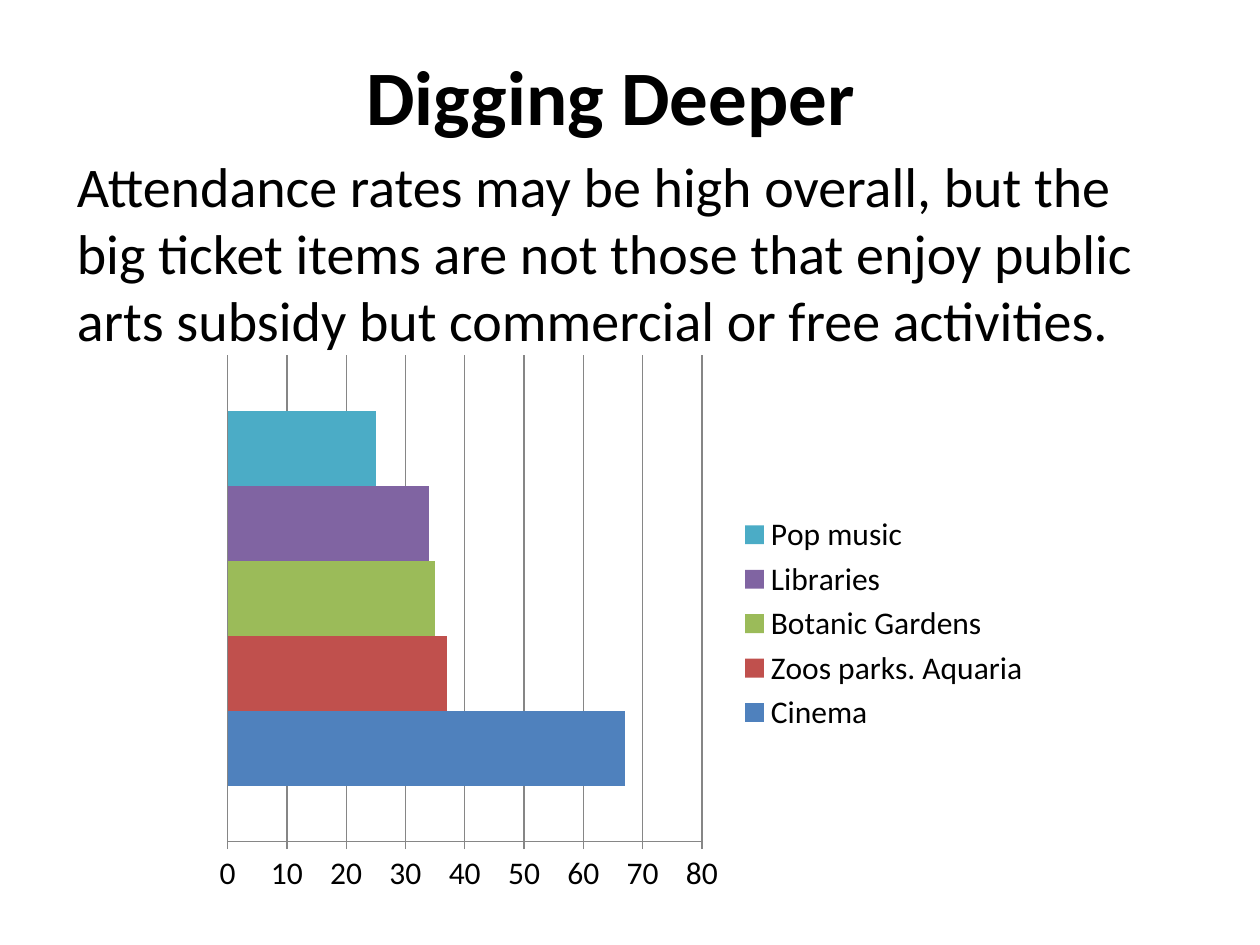
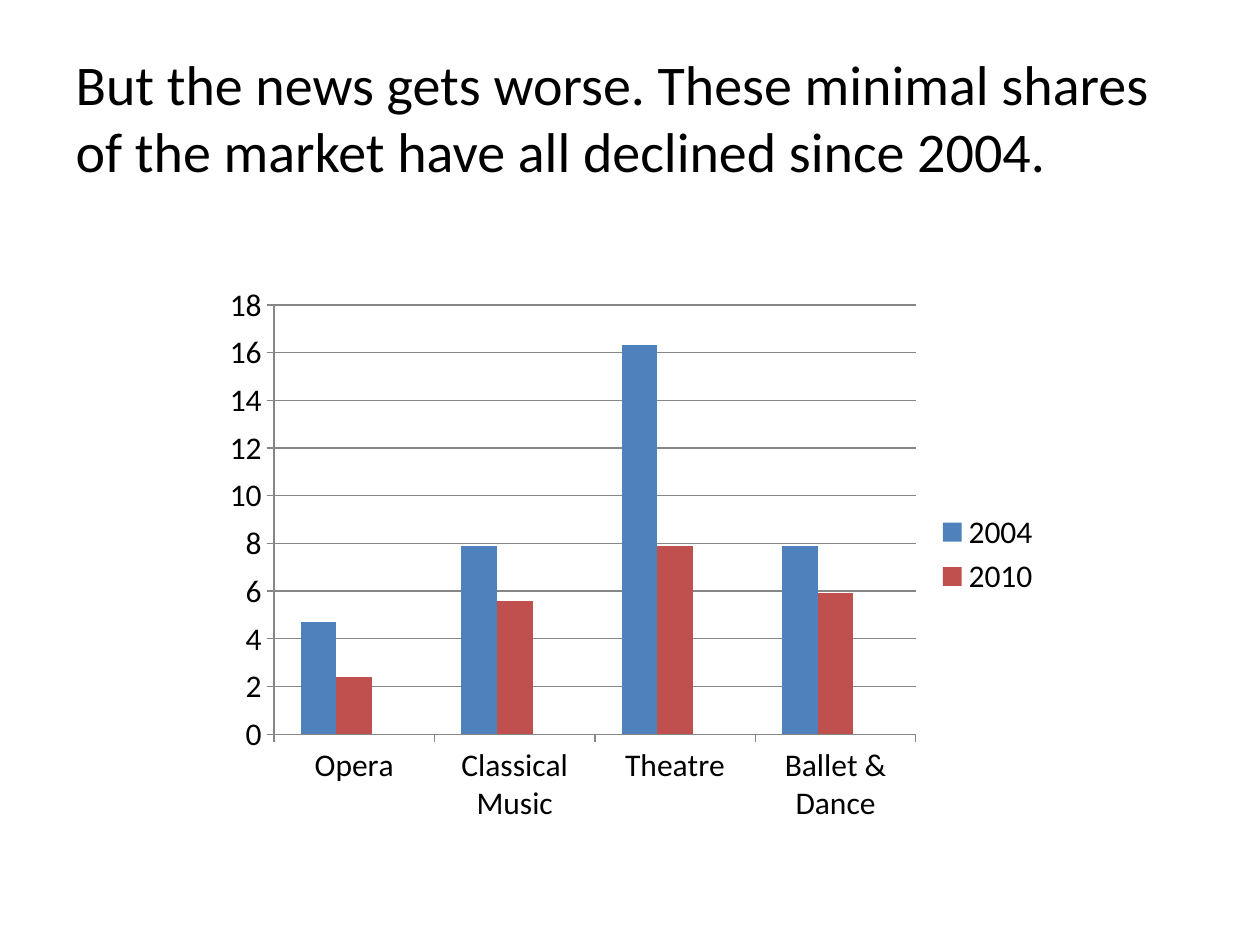
from dataclasses import dataclass

from lxml import etree
from pptx import Presentation
from pptx.chart.data import CategoryChartData
from pptx.dml.color import RGBColor
from pptx.enum.chart import XL_CHART_TYPE, XL_LEGEND_POSITION, XL_TICK_MARK
from pptx.enum.text import MSO_ANCHOR, MSO_AUTO_SIZE, PP_ALIGN
from pptx.oxml.ns import qn
from pptx.util import Inches, Pt

BAR, COLUMN = XL_CHART_TYPE.BAR_CLUSTERED, XL_CHART_TYPE.COLUMN_CLUSTERED
LEGEND_RIGHT = XL_LEGEND_POSITION.RIGHT
TICK_OUT = XL_TICK_MARK.OUTSIDE
LEFT, CENTER = PP_ALIGN.LEFT, PP_ALIGN.CENTER
TOP, MIDDLE = MSO_ANCHOR.TOP, MSO_ANCHOR.MIDDLE
NO_FIT = MSO_AUTO_SIZE.NONE

FONT = "Calibri"
INK, GRID = "000000", "868686"
SERIES_COLORS = ("4F81BD", "C0504D", "9BBB59", "8064A2", "4BACC6")
TEXT_WIDTH = 9
CHART_SIZE = (6.67, 4.44)
TITLE_AND_BODY, TITLE_ONLY = 1, 5


@dataclass
class TextStyle:
    """Position and look of a placeholder, in inches and points."""
    left: float
    top: float
    height: float
    size: int = 32
    bold: bool = False
    align: PP_ALIGN = LEFT
    anchor: MSO_ANCHOR = MIDDLE


@dataclass
class ChartSpec:
    """Kind, position and data of a clustered chart."""
    kind: XL_CHART_TYPE
    left: float
    top: float
    categories: tuple
    series: dict
    show_categories: bool = True
    unlisted: tuple = ()


def rgb(value: str) -> RGBColor:
    """Turn a hex string into a colour."""
    return RGBColor.from_string(value)


def style_font(font, size: int, bold: bool = False) -> None:
    """Apply the shared typeface and ink."""
    font.name, font.size, font.bold = FONT, Pt(size), bold
    font.color.rgb = rgb(INK)


def fill_text(sp, text: str, style: TextStyle) -> None:
    """Place a placeholder and write one unbulleted paragraph in it."""
    sp.left, sp.top = Inches(style.left), Inches(style.top)
    sp.width, sp.height = Inches(TEXT_WIDTH), Inches(style.height)
    tf = sp.text_frame
    tf.word_wrap, tf.auto_size, tf.vertical_anchor = True, NO_FIT, style.anchor
    p = tf.paragraphs[0]
    p.alignment = style.align
    p_pr = p._p.get_or_add_pPr()
    p_pr.set("marL", "0")
    p_pr.set("indent", "0")
    etree.SubElement(p_pr, qn("a:buNone"))
    r = p.add_run()
    r.text = text
    style_font(r.font, style.size, style.bold)


def style_axis(axis) -> None:
    """Draw an axis with a thin grey line and outer ticks."""
    axis.major_tick_mark = TICK_OUT
    axis.format.line.color.rgb = rgb(GRID)
    axis.format.line.width = Pt(0.75)


def hide_legend_entry(legend, index: int) -> None:
    """Leave one series out of the legend."""
    entry = etree.Element(qn("c:legendEntry"))
    etree.SubElement(entry, qn("c:idx")).set("val", str(index))
    etree.SubElement(entry, qn("c:delete")).set("val", "1")
    legend._element.find(qn("c:legendPos")).addnext(entry)


def add_chart(s, spec: ChartSpec) -> None:
    """Add a chart with grid lines and a legend on the right."""
    data = CategoryChartData()
    data.categories = spec.categories
    for name, values in spec.series.items():
        data.add_series(name, values)
    box = (Inches(n) for n in (spec.left, spec.top, *CHART_SIZE))
    chart = s.shapes.add_chart(spec.kind, *box, data).chart
    style_font(chart.font, 18)
    chart.has_title = False

    chart.has_legend = True
    chart.legend.position = LEGEND_RIGHT
    chart.legend.include_in_layout = False
    for index in spec.unlisted:
        hide_legend_entry(chart.legend, index)

    plot = chart.plots[0]
    plot.vary_by_categories, plot.gap_width, plot.overlap = False, 150, 0
    for series, color in zip(plot.series, SERIES_COLORS):
        series.format.fill.solid()
        series.format.fill.fore_color.rgb = rgb(color)

    style_axis(chart.category_axis)
    style_axis(chart.value_axis)
    chart.category_axis.visible = spec.show_categories
    chart.value_axis.has_major_gridlines = True
    grid = chart.value_axis.major_gridlines.format.line
    grid.color.rgb, grid.width = rgb(GRID), Pt(0.75)


HEADING = TextStyle(0.35, 0.13, 1.25, size=44, bold=True, align=CENTER)
STATEMENT = TextStyle(0.5, 0.3, 1.25)
BODY = TextStyle(0.51, 1.15, 1.57, anchor=TOP)

ATTENDANCE = ChartSpec(
    BAR, 1.61, 2.73, ("1",),
    {
        "Cinema": (67,),
        "Zoos parks. Aquaria": (37,),
        "Botanic Gardens": (35,),
        "Libraries": (34,),
        "Pop music": (25,),
    },
    show_categories=False,
)
DECLINE = ChartSpec(
    COLUMN, 1.69, 2.18,
    ("Opera", "Classical Music", "Theatre", "Ballet & Dance"),
    {
        "2004": (4.7, 7.9, 16.3, 7.9),
        "2010": (2.4, 5.6, 7.9, 5.9),
        "Series 3": (None,) * 4,
    },
    unlisted=(2,),
)


def build_attendance(prs) -> None:
    """Build the slide on the best attended activities."""
    s = prs.slides.add_slide(prs.slide_layouts[TITLE_AND_BODY])
    fill_text(s.shapes.title, "Digging Deeper", HEADING)
    fill_text(
        s.placeholders[1],
        "Attendance rates may be high overall, but the big ticket items are "
        "not those that enjoy public arts subsidy but commercial or free "
        "activities.",
        BODY,
    )
    add_chart(s, ATTENDANCE)


def build_decline(prs) -> None:
    """Build the slide on the falling shares since 2004."""
    s = prs.slides.add_slide(prs.slide_layouts[TITLE_ONLY])
    fill_text(
        s.shapes.title,
        "But the news gets worse. These minimal shares of the market have "
        "all declined since 2004.",
        STATEMENT,
    )
    add_chart(s, DECLINE)


def main() -> None:
    """Build and save the presentation."""
    prs = Presentation()
    prs.slide_width, prs.slide_height = Inches(10), Inches(7.5)
    build_attendance(prs)
    build_decline(prs)
    prs.save("out.pptx")


if __name__ == "__main__":
    main()
